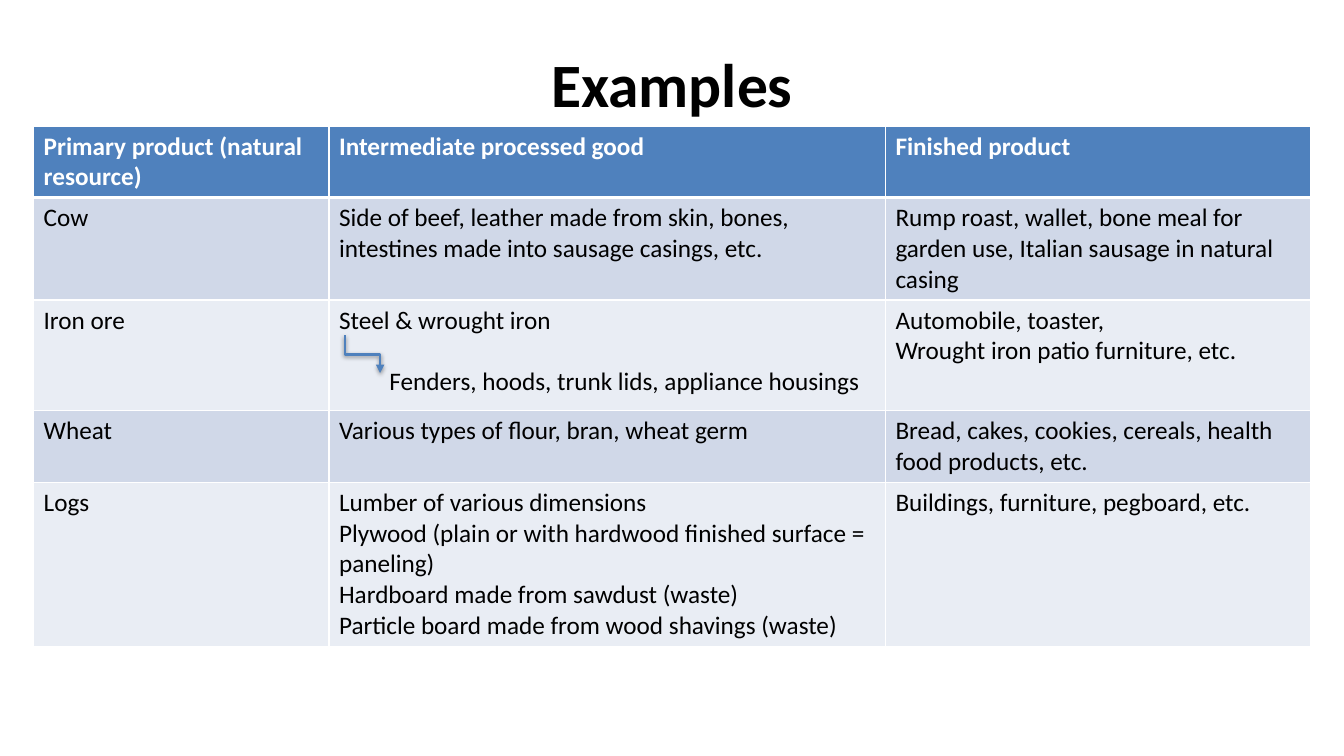
import pptx
import pptx.dml.color
import pptx.enum.shapes
import pptx.enum.text
import pptx.oxml
import pptx.oxml.ns
import pptx.util

Pt = pptx.util.Pt
RGBColor = pptx.dml.color.RGBColor

BLUE = RGBColor(0x4F, 0x81, 0xBD)
BAND_DARK = RGBColor(0xD0, 0xD8, 0xE8)
BAND_LIGHT = RGBColor(0xE9, 0xED, 0xF4)
WHITE = RGBColor(0xFF, 0xFF, 0xFF)
BLACK = RGBColor(0x00, 0x00, 0x00)
FONT = "Calibri"
LEFT, WIDTH = Pt(24), Pt(912)
COLUMN_WIDTHS = [211, 397.5, 303.5]
ROW_HEIGHTS = [51, 73, 79, 51, 117]
FENDERS = "Fenders, hoods, trunk lids, appliance housings"

PRODUCTS = [
    ["Primary product (natural resource)", "Intermediate processed good", "Finished product"],
    ["Cow",
     "Side of beef, leather made from skin, bones, intestines made into sausage casings, etc.",
     "Rump roast, wallet, bone meal for garden use, Italian sausage in natural casing"],
    ["Iron ore",
     "Steel & wrought iron\n" + FENDERS,
     "Automobile, toaster,\nWrought iron patio furniture, etc."],
    ["Wheat",
     "Various types of flour, bran, wheat germ",
     "Bread, cakes, cookies, cereals, health food products, etc."],
    ["Logs",
     "Lumber of various dimensions\n"
     "Plywood (plain or with hardwood finished surface = paneling)\n"
     "Hardboard made from sawdust (waste)\n"
     "Particle board made from wood shavings (waste)",
     "Buildings, furniture, pegboard, etc."],
]


def add_xml(parent, tag, attributes="", children=""):
    """Append a DrawingML element to parent."""
    namespace = pptx.oxml.ns.nsdecls("a")
    parent.append(pptx.oxml.parse_xml(
        f"<a:{tag} {namespace} {attributes}>{children}</a:{tag}>"))


def style_font(font, size, color, bold):
    font.name = FONT
    font.size = Pt(size)
    font.bold = bold
    font.color.rgb = color


deck = pptx.Presentation()
deck.slide_width, deck.slide_height = Pt(960), Pt(540)
slide = deck.slides.add_slide(deck.slide_layouts[5])

# Title
title = slide.shapes.title
title.left, title.top, title.width, title.height = LEFT, Pt(29), WIDTH, Pt(61)
title.text_frame.text = "Examples"
title.text_frame.word_wrap = True
title.text_frame.vertical_anchor = pptx.enum.text.MSO_ANCHOR.MIDDLE
heading = title.text_frame.paragraphs[0]
heading.alignment = pptx.enum.text.PP_ALIGN.CENTER
style_font(heading.font, 44, BLACK, True)

# Table of products
products = slide.shapes.add_table(
    len(ROW_HEIGHTS), len(COLUMN_WIDTHS), LEFT, Pt(90), WIDTH, Pt(sum(ROW_HEIGHTS))).table
for column, width in zip(products.columns, COLUMN_WIDTHS):
    column.width = Pt(width)
for row, height in zip(products.rows, ROW_HEIGHTS):
    row.height = Pt(height)

for row_index, texts in enumerate(PRODUCTS):
    is_header = row_index == 0
    band = BLUE if is_header else BAND_DARK if row_index % 2 else BAND_LIGHT
    border_widths = {"lnL": 1, "lnR": 1,
                     "lnT": 3 if row_index == 1 else 1,
                     "lnB": 3 if is_header else 1}
    for column_index, text in enumerate(texts):
        cell = products.cell(row_index, column_index)
        cell.text = text
        cell_properties = cell._tc.get_or_add_tcPr()
        for side, width in border_widths.items():
            add_xml(cell_properties, side, f'w="{Pt(width)}"',
                    f'<a:solidFill><a:srgbClr val="{WHITE}"/></a:solidFill>')
        cell.fill.solid()
        cell.fill.fore_color.rgb = band
        for paragraph in cell.text_frame.paragraphs:
            if paragraph.text == FENDERS:
                paragraph.level = 1
                paragraph._p.get_or_add_pPr().set("marL", str(Pt(36)))
                paragraph.space_before = Pt(22)
            style_font(paragraph.font, 18, WHITE if is_header else BLACK, is_header)

# Arrow from steel to the parts made of it, turned so that it leaves downwards
steel_arrow = slide.shapes.add_connector(
    pptx.enum.shapes.MSO_CONNECTOR.ELBOW, Pt(272.5), Pt(240.5), Pt(245.5), Pt(265.5))
steel_arrow.line.color.rgb = BLUE
steel_arrow.line.width = Pt(2)
arrow_properties = steel_arrow._element.spPr
arrow_properties.xfrm.set("rot", str(270 * 60000))
add_xml(steel_arrow.line._get_or_add_ln(), "tailEnd", 'type="triangle"')
add_xml(arrow_properties, "effectLst", children=(
    f'<a:outerShdw blurRad="{Pt(3.1)}" dist="{Pt(1.6)}" dir="5400000" rotWithShape="0">'
    f'<a:srgbClr val="{BLACK}"><a:alpha val="38000"/></a:srgbClr></a:outerShdw>'))

deck.save("out.pptx")
